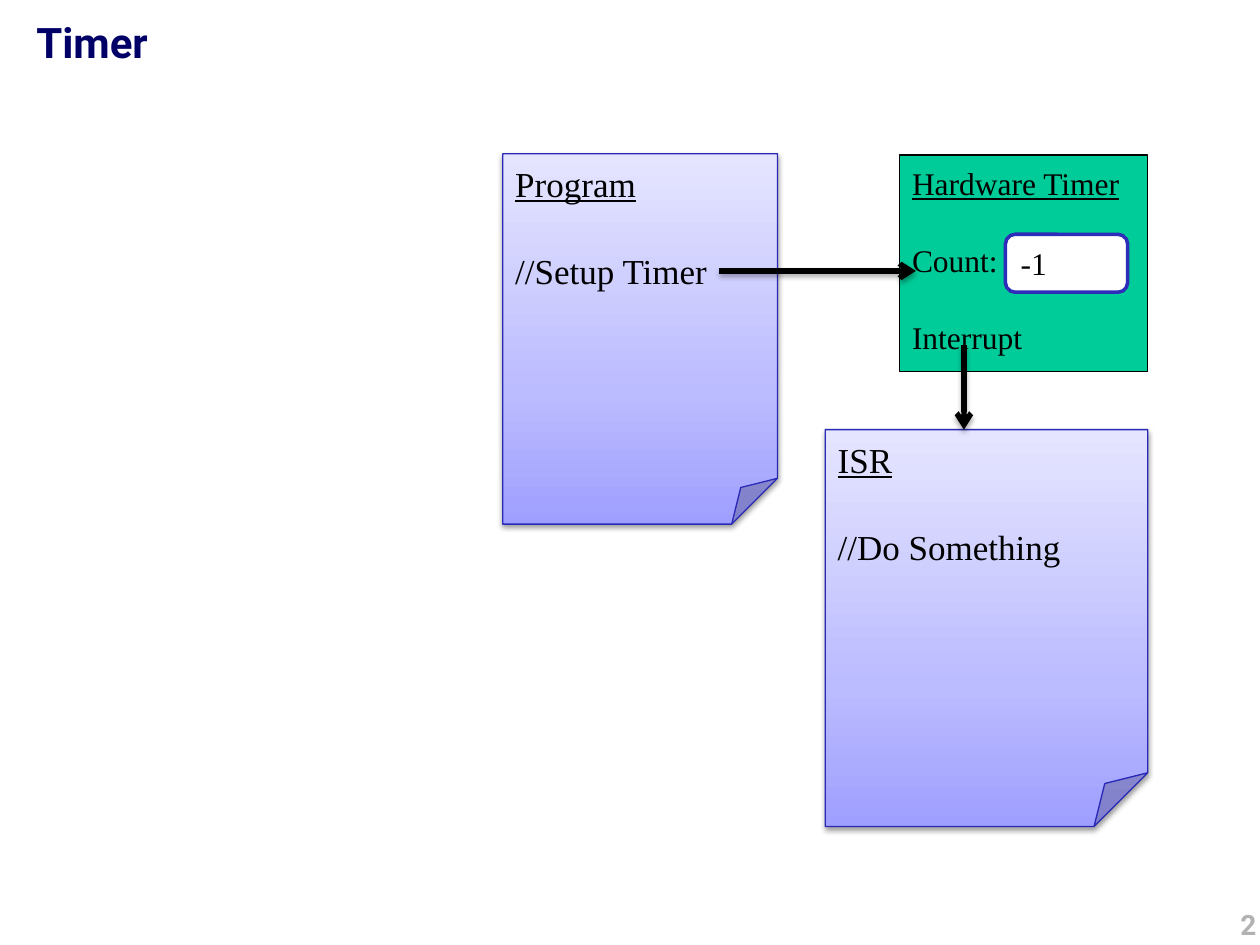
from copy import deepcopy
from dataclasses import dataclass

from pptx import Presentation
from pptx.dml.color import RGBColor
from pptx.enum.shapes import MSO_CONNECTOR, MSO_SHAPE
from pptx.enum.text import MSO_ANCHOR, PP_ALIGN
from pptx.oxml import parse_xml
from pptx.oxml.ns import nsdecls, qn
from pptx.util import Inches, Pt

BLACK = RGBColor(0x00, 0x00, 0x00)
WHITE = RGBColor(0xFF, 0xFF, 0xFF)
NAVY = RGBColor(0x00, 0x00, 0x66)
GRAY = RGBColor(0xB2, 0xB2, 0xB2)
GREEN = RGBColor(0x00, 0xCC, 0x99)
BLUE = RGBColor(0x2D, 0x2D, 0xB9)
NOTE_LINE = RGBColor(0x29, 0x29, 0xB8)
NOTE_STOPS = (
    (0, RGBColor(0x9F, 0x9F, 0xFF)),
    (0.35, RGBColor(0xBB, 0xBB, 0xFF)),
    (1, RGBColor(0xE5, 0xE5, 0xFF)),
)
HEADING_FONT = "Roboto"
BODY_FONT = "Times New Roman"


@dataclass(frozen=True)
class Box:
    left: float
    top: float
    width: float
    height: float

    def lengths(self) -> tuple:
        return tuple(map(Inches, (self.left, self.top, self.width, self.height)))


@dataclass(frozen=True)
class Note:
    box: Box
    lines: tuple


@dataclass(frozen=True)
class Arrow:
    start: tuple
    end: tuple


NOTES = (
    Note(Box(6.55, 3.41, 2.56, 3.15), ("ISR", "//Do Something")),
    Note(Box(3.99, 1.22, 2.18, 2.94), ("Program", "//Setup Timer")),
)
ARROWS = (
    Arrow((7.65, 2.74), (7.65, 3.41)),
    Arrow((5.71, 2.15), (7.27, 2.15)),
)


def write_text(shape, *lines, size=18, font=BODY_FONT, color=BLACK, bold=False,
               underline_first=False, gap=0, align=PP_ALIGN.LEFT,
               anchor=MSO_ANCHOR.TOP, inset=0.05) -> None:
    frame = shape.text_frame
    frame.word_wrap = True
    frame.vertical_anchor = anchor
    frame.margin_top = Inches(inset)
    for index, line in enumerate(lines):
        paragraph = frame.add_paragraph() if index else frame.paragraphs[0]
        paragraph.alignment = align
        paragraph.space_before = Pt(gap if index else 0)
        run = paragraph.add_run()
        run.text = line
        run.font.size = Pt(size)
        run.font.name = font
        run.font.bold = bold
        run.font.underline = underline_first and index == 0
        run.font.color.rgb = color


def add_shadow(shape, alpha: int, distance: float) -> None:
    shape._element.spPr.append(parse_xml(
        f'<a:effectLst {nsdecls("a")}><a:outerShdw blurRad="{Pt(3.1)}" '
        f'dist="{Pt(distance)}" dir="5400000" rotWithShape="0">'
        f'<a:srgbClr val="000000"><a:alpha val="{alpha * 1000}"/></a:srgbClr>'
        f'</a:outerShdw></a:effectLst>'
    ))


def add_box(slide, kind: MSO_SHAPE, box: Box, line_color: RGBColor,
            line_width: float, fill: RGBColor = WHITE):
    shape = slide.shapes.add_shape(kind, *box.lengths())
    shape.fill.solid()
    shape.fill.fore_color.rgb = fill
    shape.line.color.rgb = line_color
    shape.line.width = Pt(line_width)
    return shape


def add_note(slide, note: Note) -> None:
    shape = add_box(slide, MSO_SHAPE.FOLDED_CORNER, note.box, NOTE_LINE, 0.75)
    shape.fill.gradient()
    shape.fill.gradient_angle = 90
    stop_list = shape._element.spPr.find(".//" + qn("a:gsLst"))
    stop_list.append(deepcopy(stop_list[0]))
    for stop, (position, color) in zip(shape.fill.gradient_stops, NOTE_STOPS):
        stop.position = position
        stop.color.rgb = color
    add_shadow(shape, 38, 1.6)
    write_text(shape, *note.lines, size=20, underline_first=True, gap=25.5, inset=0.07)


def add_arrow(slide, arrow: Arrow) -> None:
    connector = slide.shapes.add_connector(
        MSO_CONNECTOR.STRAIGHT, *map(Inches, arrow.start + arrow.end))
    connector.line.color.rgb = BLACK
    connector.line.width = Pt(3)
    connector.line._get_or_add_ln().append(
        parse_xml(f'<a:tailEnd {nsdecls("a")} type="arrow"/>'))
    add_shadow(connector, 35, 1.8)


def add_timer(slide) -> None:
    timer = add_box(slide, MSO_SHAPE.RECTANGLE, Box(7.14, 1.23, 1.97, 1.72),
                    BLACK, 0.75, GREEN)
    write_text(timer, "Hardware Timer", "Count:", "Interrupt",
               underline_first=True, gap=22.5, inset=0.07)
    count = add_box(slide, MSO_SHAPE.ROUNDED_RECTANGLE, Box(7.98, 1.86, 0.97, 0.46),
                    BLUE, 2)
    write_text(count, "-1", anchor=MSO_ANCHOR.MIDDLE)
    for shape in (timer, count):
        shape.shadow.inherit = False


def main() -> None:
    presentation = Presentation()
    presentation.slide_width = Inches(10)
    presentation.slide_height = Inches(7.5)
    slide = presentation.slides.add_slide(presentation.slide_layouts[6])

    title = slide.shapes.add_textbox(*Box(0.19, 0.08, 9.71, 1).lengths())
    write_text(title, "Timer", size=24, font=HEADING_FONT, color=NAVY, bold=True)
    number = slide.shapes.add_textbox(*Box(6.9, 7.15, 3.17, 0.5).lengths())
    write_text(number, "2", size=16, font=HEADING_FONT, color=GRAY, bold=True,
               align=PP_ALIGN.RIGHT)

    add_timer(slide)
    for note in NOTES:
        add_note(slide, note)
    for arrow in ARROWS:
        add_arrow(slide, arrow)
    presentation.save("out.pptx")


if __name__ == "__main__":
    main()
